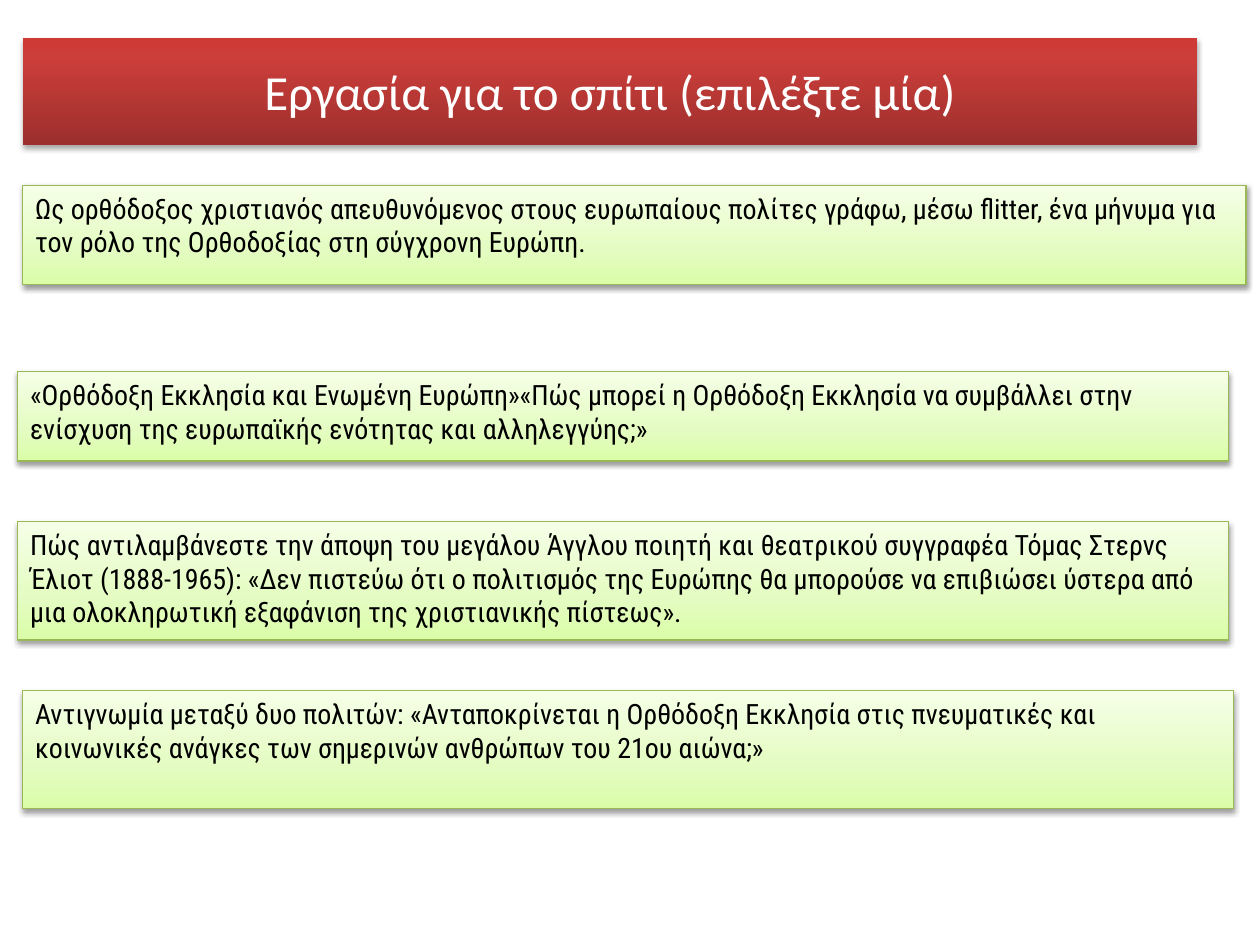
"""Build the homework slide: a red title banner above four green task boxes."""
from dataclasses import dataclass

from lxml.etree import SubElement
from pptx import Presentation
from pptx.dml.color import RGBColor
from pptx.enum.shapes import MSO_SHAPE as Shape
from pptx.enum.text import MSO_ANCHOR as Anchor, PP_ALIGN as Align
from pptx.oxml.ns import qn
from pptx.util import Inches, Pt


@dataclass(frozen=True)
class Theme:
    title_font: str = "Calibri"
    task_font: str = "Roboto Condensed"
    title_size: int = 28
    task_size: int = 16
    title_color: str = "FFFFFF"
    task_color: str = "000000"
    edge: str = "98B955"
    shade: str = "000000"
    red: tuple = ((0, "9C2F2D"), (80, "CB3E3A"), (100, "CE3B37"))
    green: tuple = ((0, "DAFDA7"), (35, "E4FCC2"), (100, "F5FFE7"))


class HomeworkSlide:
    COLUMNS, ROWS = 100, 75

    def __init__(self, theme):
        self.theme = theme
        self.deck = Presentation()
        self.deck.slide_width, self.deck.slide_height = Inches(10), Inches(7.5)
        self.page = self.deck.slides.add_slide(self.deck.slide_layouts[6])

    def color(self, parent, value):
        return SubElement(parent, qn("a:srgbClr"), val=value)

    def panel(self, left, top, width, height, stops, opacity, distance):
        column = self.deck.slide_width / self.COLUMNS
        row = self.deck.slide_height / self.ROWS
        box = self.page.shapes.add_shape(
            Shape.RECTANGLE, round(left * column), round(top * row),
            round(width * column), round(height * row))
        self.gradient(box, stops)
        self.shadow(box, opacity, distance)
        return box

    def gradient(self, box, stops):
        fill = SubElement(box._element.spPr, qn("a:gradFill"), rotWithShape="1")
        stop_list = SubElement(fill, qn("a:gsLst"))
        for percent, value in stops:
            stop = SubElement(stop_list, qn("a:gs"), pos=str(percent * 1000))
            self.color(stop, value)
        SubElement(fill, qn("a:lin"), ang=str(270 * 60000), scaled="0")

    def shadow(self, box, opacity, distance):
        box.shadow.inherit = False
        effects = box._element.spPr.find(qn("a:effectLst"))
        shadow = SubElement(
            effects, qn("a:outerShdw"), blurRad=str(Pt(3.1)),
            dist=str(Pt(distance)), dir=str(90 * 60000), rotWithShape="0")
        shade = self.color(shadow, self.theme.shade)
        SubElement(shade, qn("a:alpha"), val=str(opacity * 1000))

    def label(self, box, text, font, size, color, align, anchor):
        frame = box.text_frame
        frame.word_wrap = True
        frame.vertical_anchor = anchor
        para = frame.paragraphs[0]
        para.text = text
        para.alignment = align
        para.font.name = font
        para.font.size = Pt(size)
        para.font.color.rgb = RGBColor.from_string(color)
        return para

    def title(self, text, left, top, width, height):
        theme = self.theme
        box = self.panel(left, top, width, height, theme.red, 35, 1.8)
        box.line.fill.background()
        self.label(box, text, theme.title_font, theme.title_size,
                   theme.title_color, Align.CENTER, Anchor.MIDDLE)

    def task(self, text, left, top, width, height):
        theme = self.theme
        box = self.panel(left, top, width, height, theme.green, 38, 1.6)
        box.line.color.rgb = RGBColor.from_string(theme.edge)
        box.line.width = Pt(0.75)
        para = self.label(box, text, theme.task_font, theme.task_size,
                          theme.task_color, Align.LEFT, Anchor.TOP)
        para.space_before = Pt(0.2 * theme.task_size)


TASKS = (
    ("Ως ορθόδοξος χριστιανός απευθυνόμενος στους ευρωπαίους πολίτες γράφω, "
     "μέσω flitter, ένα μήνυμα για τον ρόλο της Ορθοδοξίας στη σύγχρονη Ευρώπη.",
     1.8, 14.7, 97.1, 7.9),
    ("«Ορθόδοξη Εκκλησία και Ενωμένη Ευρώπη»«Πώς μπορεί η Ορθόδοξη Εκκλησία να "
     "συμβάλλει στην ενίσχυση της ευρωπαϊκής ενότητας και αλληλεγγύης;»",
     1.4, 29.5, 96.1, 7.1),
    ("Πώς αντιλαμβάνεστε την άποψη του μεγάλου Άγγλου ποιητή και θεατρικού "
     "συγγραφέα Τόμας Στερνς Έλιοτ (1888-1965): «Δεν πιστεύω ότι ο πολιτισμός "
     "της Ευρώπης θα μπορούσε να επιβιώσει ύστερα από μια ολοκληρωτική "
     "εξαφάνιση της χριστιανικής πίστεως».",
     1.4, 41.4, 96.1, 9.4),
    ("Αντιγνωμία μεταξύ δυο πολιτών: «Ανταποκρίνεται η Ορθόδοξη Εκκλησία στις "
     "πνευματικές και κοινωνικές ανάγκες των σημερινών ανθρώπων του 21ου αιώνα;»",
     1.8, 54.8, 96.1, 9.4),
)


def main():
    slide = HomeworkSlide(Theme())
    slide.title("Εργασία για το σπίτι (επιλέξτε μία)", 1.8, 3, 93.2, 8.5)
    for task in TASKS:
        slide.task(*task)
    slide.deck.save("out.pptx")


if __name__ == "__main__":
    main()
